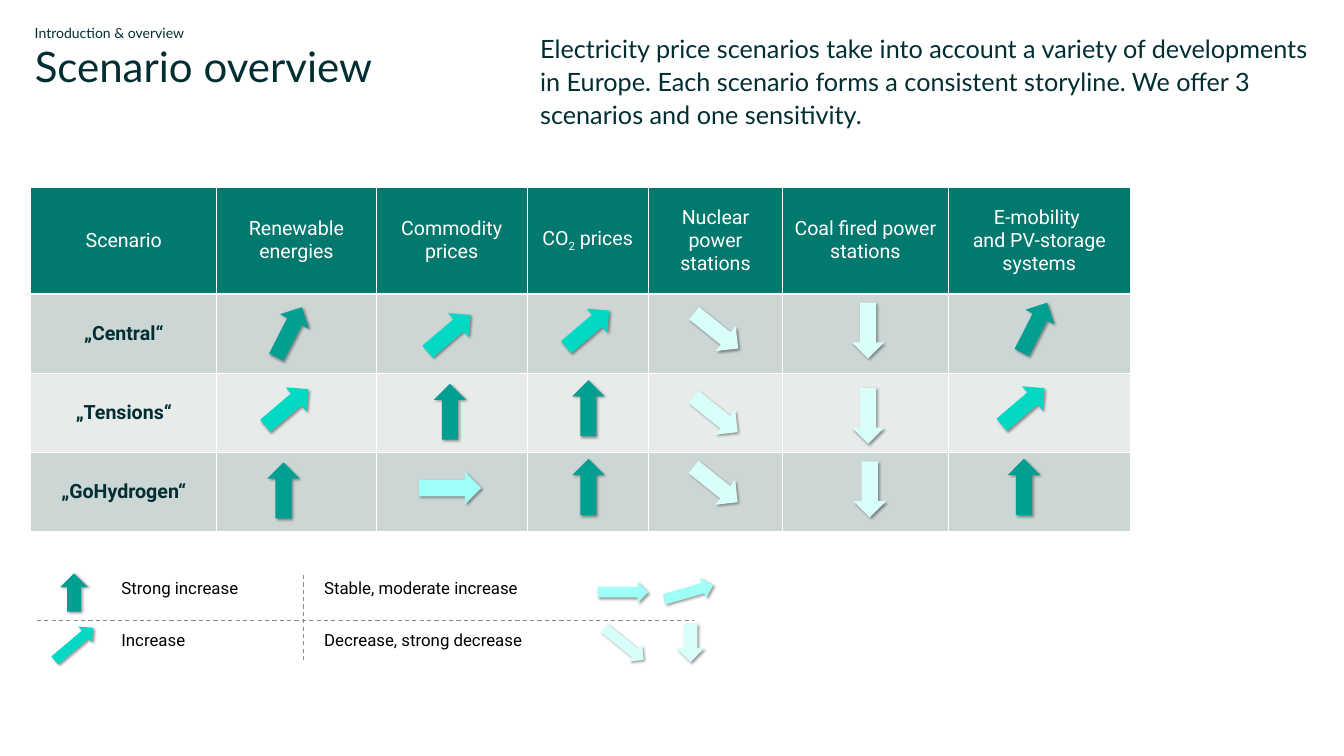
from dataclasses import dataclass

from lxml import etree
from pptx import Presentation
from pptx.dml.color import RGBColor
from pptx.enum import dml, shapes, text
from pptx.oxml import ns
from pptx.util import Pt

COLOURS = {
    "ink": "002E33", "black": "000000", "white": "FFFFFF", "rule": "898989",
    "header": "01796E", "odd row": "CCD7D5", "even row": "E7ECEB",
    "strong": "019F91", "increase": "02D9C5", "stable": "9FFEF5", "decrease": "D9FFFB",
}


@dataclass(frozen=True)
class ArrowKind:
    colour: str
    rotation: float
    width: float
    height: float


@dataclass(frozen=True)
class Arrow:
    kind: ArrowKind
    x: float  # centre
    y: float


@dataclass(frozen=True)
class Label:
    words: str
    left: float
    top: float
    width: float
    height: float
    size: float
    font: str = "Lato"
    colour: str = "ink"
    spacing: float = 0.9
    wrap: bool = True


UP = ArrowKind("strong", 270, 80, 46)
STEEP = ArrowKind("strong", 297, 80, 46)
RISING = ArrowKind("increase", 319.6, 80.6, 45.4)
LEVEL = ArrowKind("stable", 0, 89.3, 46.8)
FALLING = ArrowKind("decrease", 38.7, 80.6, 45.4)
DOWN = ArrowKind("decrease", 90, 80, 46)

COLUMN_WIDTHS = [265.7, 227.5, 216, 172.8, 192.2, 236.2, 260.6]
ROW_HEIGHTS = [153.4, 113, 113, 113]
HEADERS = ["Scenario", "Renewable energies", "Commodity prices", "CO|2| prices",
           "Nuclear power stations", "Coal fired power stations",
           "E-mobility \vand PV-storage systems"]
SCENARIOS = ["„Central“", "„Tensions“", "„GoHydrogen“"]

TABLE_ARROWS = [
    # Central
    Arrow(STEEP, 412.9, 474.5), Arrow(RISING, 641.5, 476.3), Arrow(RISING, 839.5, 469.8),
    Arrow(FALLING, 1023.1, 472.7), Arrow(DOWN, 1240.2, 472.3), Arrow(STEEP, 1477.8, 468),
    # Tensions
    Arrow(RISING, 409.7, 582.1), Arrow(UP, 642.6, 588.2), Arrow(UP, 840.6, 583.2),
    Arrow(FALLING, 1022.4, 592.2), Arrow(DOWN, 1240.2, 594), Arrow(RISING, 1461.6, 580.7),
    # GoHydrogen
    Arrow(UP, 405, 700.6), Arrow(LEVEL, 643, 697.3), Arrow(UP, 840.6, 695.5),
    Arrow(FALLING, 1022.4, 692.3), Arrow(DOWN, 1242.4, 699.1), Arrow(UP, 1462.7, 695.5),
]
LEGEND_ARROWS = [
    Arrow(ArrowKind("strong", 270, 54.7, 39.6), 105.8, 846.4),
    Arrow(ArrowKind("increase", 319.6, 72, 30.2), 105.8, 920.2),
    Arrow(ArrowKind("stable", 0, 72, 30.2), 889.9, 846),
    Arrow(ArrowKind("stable", 344, 72, 30.2), 984.2, 846),
    Arrow(ArrowKind("decrease", 38.7, 72, 30.2), 891.4, 920.2),
    Arrow(ArrowKind("decrease", 90, 54.7, 39.6), 986.4, 918.4),
]
LEGEND_LABELS = [
    Label(words, left, top, width, 31.7, 24, "Roboto", "black", wrap=False)
    for words, left, top, width in [
        ("Strong increase", 170.6, 825.8, 175.7),
        ("Increase", 170.6, 900, 98.6),
        ("Stable, moderate increase", 460.1, 825.8, 288.7),
        ("Decrease, strong decrease", 460.1, 900, 296.6),
    ]
]
TITLE = Label("Scenario overview", 42.5, 61.9, 526.3, 72.7, 60)
KICKER = Label("Introduction & overview", 42.5, 34.6, 409, 33.8, 20)
LEAD = Label("Electricity price scenarios take into account a variety of developments in Europe. "
             "Each scenario forms a consistent storyline. We offer 3 scenarios and one sensitivity.",
             764.6, 39.6, 1112.4, 146.9, 36, spacing=1.1)


def rgb(name: str) -> RGBColor:
    return RGBColor.from_string(COLOURS[name])


def set_font(para, name: str, size: float, colour: str, bold: bool = False) -> None:
    para.font.name = name
    para.font.size = Pt(size)
    para.font.bold = bold
    para.font.color.rgb = rgb(colour)


def write_label(box, label: Label) -> None:
    """Place a text box or placeholder and fill it with the label's words."""
    box.left, box.top = Pt(label.left), Pt(label.top)
    box.width, box.height = Pt(label.width), Pt(label.height)
    frame = box.text_frame
    frame.word_wrap = label.wrap
    frame.auto_size = text.MSO_AUTO_SIZE.NONE
    frame.vertical_anchor = text.MSO_ANCHOR.TOP
    if not label.wrap:
        frame.margin_left = frame.margin_right = Pt(2.9)
        frame.margin_top = frame.margin_bottom = Pt(2.9)
    para = frame.paragraphs[0]
    para.text = label.words
    para.alignment = text.PP_ALIGN.LEFT
    para.line_spacing = label.spacing
    set_font(para, label.font, label.size, label.colour)


def add_label(parent, label: Label) -> None:
    write_label(parent.add_textbox(0, 0, 0, 0), label)


def add_arrow(parent, arrow: Arrow) -> None:
    kind = arrow.kind
    shape = parent.add_shape(
        shapes.MSO_SHAPE.RIGHT_ARROW, Pt(arrow.x - kind.width / 2),
        Pt(arrow.y - kind.height / 2), Pt(kind.width), Pt(kind.height))
    shape.rotation = kind.rotation
    shape.fill.solid()
    shape.fill.fore_color.rgb = rgb(kind.colour)
    shape.line.fill.background()
    shape.shadow.inherit = False
    effects = shape._element.spPr.find(ns.qn("a:effectLst"))
    shadow = etree.SubElement(effects, ns.qn("a:outerShdw"), blurRad=str(Pt(4)),
                              dist=str(Pt(3)), dir="2700000", algn="tl", rotWithShape="0")
    tint = etree.SubElement(shadow, ns.qn("a:srgbClr"), val=COLOURS["black"])
    etree.SubElement(tint, ns.qn("a:alpha"), val="40000")


def add_dashed_rule(parent, x1: float, y1: float, x2: float, y2: float) -> None:
    rule = parent.add_connector(shapes.MSO_CONNECTOR.STRAIGHT, Pt(x1), Pt(y1), Pt(x2), Pt(y2))
    rule.line.color.rgb = rgb("rule")
    rule.line.width = Pt(1.5)
    rule.line.dash_style = dml.MSO_LINE.DASH
    etree.SubElement(rule._element.spPr, ns.qn("a:effectLst"))


def style_cell(cell, fill: str, bottom: float) -> None:
    """Give a cell white borders, with its own bottom width, and a solid fill."""
    props = cell._tc.get_or_add_tcPr()
    for side, width in (("L", 1), ("R", 1), ("T", 1), ("B", bottom)):
        line = etree.SubElement(props, ns.qn(f"a:ln{side}"), w=str(Pt(width)))
        solid = etree.SubElement(line, ns.qn("a:solidFill"))
        etree.SubElement(solid, ns.qn("a:srgbClr"), val=COLOURS["white"])
    cell.fill.solid()
    cell.fill.fore_color.rgb = rgb(fill)
    cell.vertical_anchor = text.MSO_ANCHOR.MIDDLE


def write_cell(cell, words: str, colour: str, bold: bool) -> None:
    """Write centred words; a part between bars is a subscript."""
    para = cell.text_frame.paragraphs[0]
    if "|" in words:
        for index, part in enumerate(words.split("|")):
            span = para.add_run()
            span.text = part
            if index % 2:
                span._r.get_or_add_rPr().set("baseline", "-25000")
    else:
        para.text = words
    para.alignment = text.PP_ALIGN.CENTER
    set_font(para, "Roboto", 28, colour, bold)


def add_scenario_table(page) -> None:
    table = page.shapes.add_table(
        len(ROW_HEIGHTS), len(COLUMN_WIDTHS), Pt(44), Pt(267),
        Pt(sum(COLUMN_WIDTHS)), Pt(sum(ROW_HEIGHTS))).table
    for column, width in zip(table.columns, COLUMN_WIDTHS):
        column.width = Pt(width)
    for index, (row, height) in enumerate(zip(table.rows, ROW_HEIGHTS)):
        row.height = Pt(height)
        fill = "header" if index == 0 else "odd row" if index % 2 else "even row"
        for cell in row.cells:
            style_cell(cell, fill, 1 if index else 3)
    for column, words in enumerate(HEADERS):
        write_cell(table.cell(0, column), words, "white", False)
    for row, words in enumerate(SCENARIOS, start=1):
        write_cell(table.cell(row, 0), words, "ink", True)


def add_legend(page) -> None:
    legend = page.shapes.add_group_shape().shapes
    for arrow in LEGEND_ARROWS:
        add_arrow(legend, arrow)
    for label in LEGEND_LABELS:
        add_label(legend, label)
    add_dashed_rule(legend, 52.6, 886.3, 991.4, 886.3)
    add_dashed_rule(legend, 433.4, 821.5, 433.4, 946.1)


def main() -> None:
    deck = Presentation()
    deck.slide_width, deck.slide_height = Pt(1920), Pt(1080)
    page = deck.slides.add_slide(deck.slide_layouts[5])
    add_scenario_table(page)
    add_label(page.shapes, KICKER)
    write_label(page.shapes.title, TITLE)
    add_label(page.shapes, LEAD)
    for arrow in TABLE_ARROWS:
        add_arrow(page.shapes, arrow)
    add_legend(page)
    deck.save("out.pptx")


if __name__ == "__main__":
    main()
